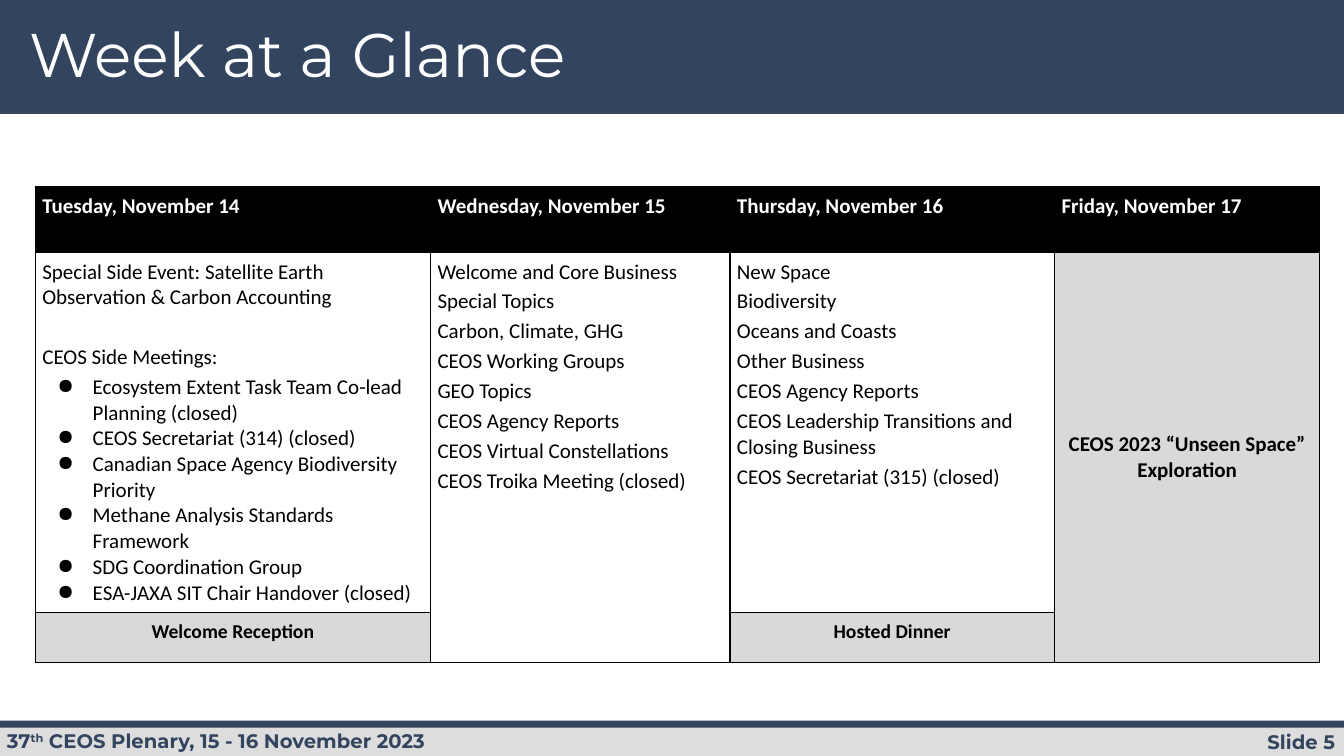
from lxml import etree
from pptx import Presentation
from pptx import util as u
from pptx.dml import color
from pptx.enum import shapes, text
from pptx.oxml import ns

NAVY, BLACK, WHITE, GREY = "33445F", "000000", "FFFFFF", "D9D9D9"
LEFT, MID, RIGHT = text.PP_ALIGN.LEFT, text.PP_ALIGN.CENTER, text.PP_ALIGN.RIGHT


def rgb(code):
    return color.RGBColor.from_string(code)


def add(parent, tag, **attrs):
    return etree.SubElement(parent, ns.qn(tag), attrs)


class Deck:
    head, body = "Montserrat", "Calibri"

    def __init__(self, wide, high):
        self.prs = Presentation()
        self.prs.slide_width, self.prs.slide_height = u.Inches(wide), u.Inches(high)
        self.slide = self.prs.slides.add_slide(self.prs.slide_layouts[6])

    def font(self, para, name, size, ink, bold=False):
        font = para.font
        font.name, font.size, font.bold = name, u.Pt(size), bold
        font.color.rgb = rgb(ink)

    def bar(self, x, y, w, h, fill):
        box = self.slide.shapes.add_shape(
            shapes.MSO_SHAPE.RECTANGLE, *map(u.Inches, (x, y, w, h)))
        box.shadow.inherit = False
        box.fill.solid()
        box.fill.fore_color.rgb = rgb(fill)
        box.line.fill.background()

    def label(self, x, y, w, h, parts, size, ink, bold=False, align=LEFT, lead=None):
        """Parts alternate between normal and raised text."""
        frame = self.slide.shapes.add_textbox(*map(u.Inches, (x, y, w, h))).text_frame
        frame.word_wrap = True
        para = frame.paragraphs[0]
        para.alignment, para.line_spacing = align, lead
        for i, part in enumerate(parts):
            run = para.add_run()
            run.text = part
            if i % 2:
                run.font._element.set("baseline", "30000")
        self.font(para, self.head, size, ink, bold)

    def grid(self, x, y, cols, rows):
        table = self.slide.shapes.add_table(
            len(rows), len(cols), u.Inches(x), u.Inches(y),
            u.Inches(sum(cols)), u.Inches(sum(rows))).table
        table.first_row = table.horz_banding = False
        for col, wide in zip(table.columns, cols):
            col.width = u.Inches(wide)
        for row, high in zip(table.rows, rows):
            row.height = u.Inches(high)
        for cell in table.iter_cells():
            self.edge(cell)
            cell.fill.background()
        return table

    def edge(self, cell):
        props = cell._tc.get_or_add_tcPr()
        for side in "LRTB":
            line = add(props, "a:ln" + side, w=str(u.Pt(1)))
            add(add(line, "a:solidFill"), "a:srgbClr", val=BLACK)

    def cell(self, cell, items, fill=None, ink=BLACK, size=15, bold=False,
             align=LEFT, after=0):
        """Items are (text, space before, bullet) triples."""
        cell.margin_left = cell.margin_right = u.Inches(0.07)
        cell.margin_top = cell.margin_bottom = u.Inches(0.07)
        if fill:
            cell.fill.solid()
            cell.fill.fore_color.rgb = rgb(fill)
        frame = cell.text_frame
        for i, (words, gap, mark) in enumerate(items):
            para = frame.add_paragraph() if i else frame.paragraphs[0]
            para.text, para.alignment = words, align
            if gap:
                para.space_before = u.Pt(gap)
            if mark:
                self.bullet(para)
            self.font(para, self.body, size, ink, bold)
        if after:
            para.space_after = u.Pt(after)

    def bullet(self, para):
        props = para._p.get_or_add_pPr()
        props.set("marL", str(u.Inches(0.5)))
        props.set("indent", str(u.Inches(-0.35)))
        add(add(props, "a:buClr"), "a:srgbClr", val=BLACK)
        add(props, "a:buChar", char="●")


def spaced(lines):
    return [(line, 3 if i else 0, False) for i, line in enumerate(lines)]


DAYS = ["Tuesday, November 14", "Wednesday, November 15",
        "Thursday, November 16", "Friday, November 17"]
SIDE = ["Ecosystem Extent Task Team Co-lead Planning (closed)",
        "CEOS Secretariat (314) (closed)",
        "Canadian Space Agency Biodiversity Priority",
        "Methane Analysis Standards Framework",
        "SDG Coordination Group",
        "ESA-JAXA SIT Chair Handover (closed)"]
TUE = [("Special Side Event: Satellite Earth Observation & Carbon Accounting", 0, False),
       ("CEOS Side Meetings:", 24.3, False)]
TUE += [(line, 0 if i else 3, True) for i, line in enumerate(SIDE)]
WED = ["Welcome and Core Business", "Special Topics", "Carbon, Climate, GHG",
       "CEOS Working Groups", "GEO Topics", "CEOS Agency Reports",
       "CEOS Virtual Constellations", "CEOS Troika Meeting (closed)"]
THU = ["New Space", "Biodiversity", "Oceans and Coasts", "Other Business",
       "CEOS Agency Reports", "CEOS Leadership Transitions and Closing Business",
       "CEOS Secretariat (315) (closed)"]


def main():
    deck = Deck(13.33, 7.5)

    # Title band and footer
    deck.bar(0, 0, 13.33, 1.13, NAVY)
    deck.bar(0, 7.19, 13.33, 0.31, "DDDDDD")
    deck.bar(0, 7.15, 13.33, 0.07, NAVY)
    deck.label(11.23, 7.19, 2.11, 0.34, ["Slide 5"], 14, NAVY, True, RIGHT)
    deck.label(-0.03, 7.18, 5.39, 0.31,
               ["37", "th", " CEOS Plenary, 15 - 16 November 2023"], 14, NAVY, True)
    deck.label(0.19, 0.19, 10.27, 0.85, ["Week at a Glance"], 44, WHITE, lead=0.9)

    # Week table
    week = deck.grid(0.35, 1.85, [3.92, 2.97, 3.22, 2.63], [0.65, 3.58, 0.49])
    for col in (1, 3):
        week.cell(1, col).merge(week.cell(2, col))
    for col, day in enumerate(DAYS):
        deck.cell(week.cell(0, col), spaced([day]), BLACK, WHITE, bold=True)

    # Sessions
    deck.cell(week.cell(1, 0), TUE)
    deck.cell(week.cell(1, 1), spaced(WED), after=3)
    deck.cell(week.cell(1, 2), spaced(THU), after=3)

    # Social events
    for row, col, event, size in ((1, 3, "CEOS 2023 “Unseen Space” Exploration", 15),
                                  (2, 0, "Welcome Reception", 14),
                                  (2, 2, "Hosted Dinner", 14)):
        deck.cell(week.cell(row, col), spaced([event]), GREY, size=size,
                  bold=True, align=MID, after=3)
    week.cell(1, 3).vertical_anchor = text.MSO_ANCHOR.MIDDLE

    deck.prs.save("out.pptx")


if __name__ == "__main__":
    main()
